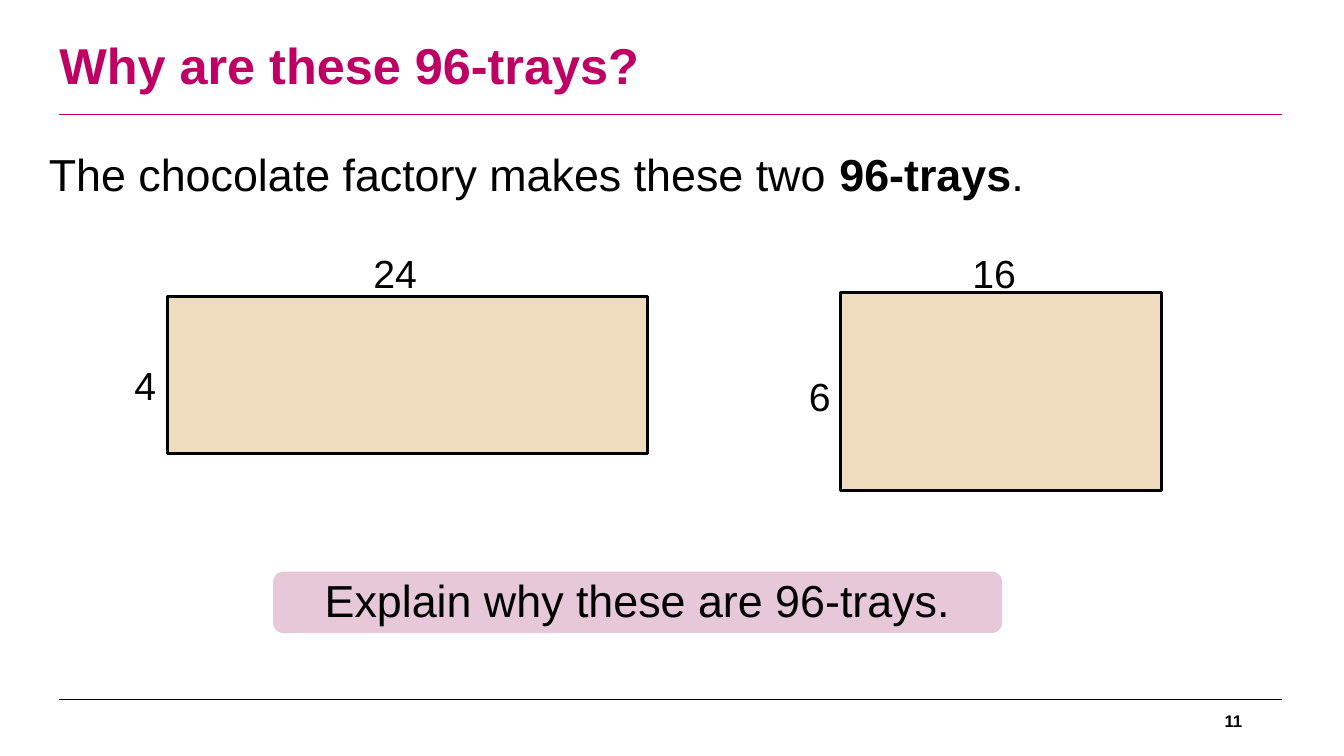
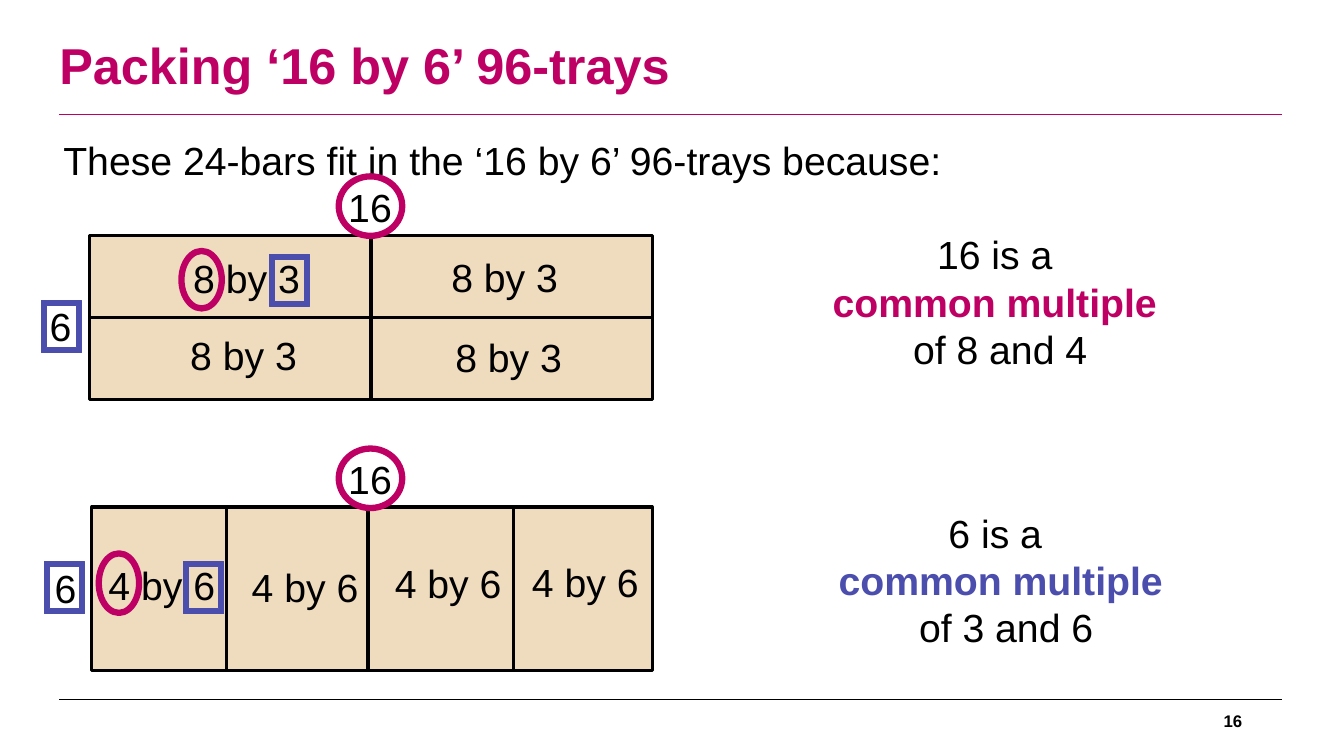
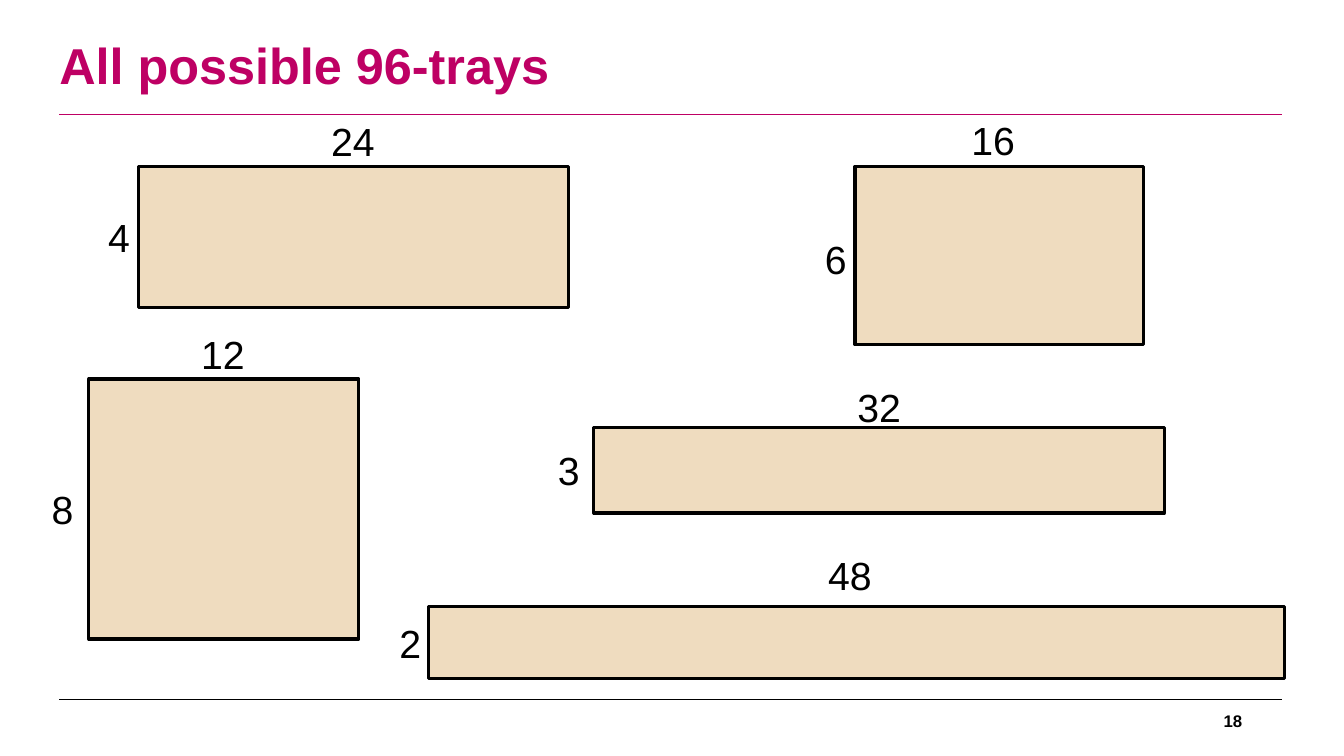
from collections import namedtuple

from lxml.etree import SubElement
from pptx import Presentation
from pptx.dml.color import RGBColor
from pptx.enum.shapes import MSO_CONNECTOR as Connector, MSO_SHAPE as Preset
from pptx.enum.text import MSO_ANCHOR as Anchor, PP_ALIGN as Align
from pptx.oxml.ns import qn
from pptx.util import Pt

PX = 9144
PAGE_WIDTH, PAGE_HEIGHT = 1333, 750
MAGENTA = RGBColor(0xBE, 0x00, 0x64)
INDIGO = RGBColor(0x4C, 0x4E, 0xAE)
BLACK = RGBColor(0x00, 0x00, 0x00)
CHOCOLATE = RGBColor(0xEF, 0xDC, 0xBF)
BLUSH = RGBColor(0xE6, 0xC8, 0xD9)

TITLE_FONT = {"name": "Arial", "size": Pt(36), "bold": True}
LARGE_FONT = {"name": "Arial", "size": Pt(32), "bold": False}
BODY_FONT = {"name": "Arial", "size": Pt(28), "bold": False}
NUMBER_FONT = {"name": "Arial", "size": Pt(12), "bold": True}
LABEL_WIDTHS = {1: 42, 2: 64, 6: 127}
LABEL_HEIGHT = 57
BREAK = "\n"

Box = namedtuple("Box", "left top width height")


def apply_format(target, values):
    """Set every named attribute of the target."""
    for name, value in values.items():
        setattr(target, name, value)


def to_emu(lengths):
    """Turn px lengths into EMU."""
    return [length * PX for length in lengths]


def write(shape, spans, font, side=10, anchor=Anchor.TOP, align=Align.LEFT, spacing=1.0):
    """Fill a shape with one paragraph of (text, colour, bold) spans."""
    frame = shape.text_frame
    apply_format(frame, {
        "word_wrap": True, "vertical_anchor": anchor,
        "margin_left": side * PX, "margin_right": side * PX,
        "margin_top": 5 * PX, "margin_bottom": 5 * PX,
    })
    para = frame.paragraphs[0]
    apply_format(para, {"alignment": align, "line_spacing": spacing})
    for text, colour, bold in spans:
        if text == BREAK:
            para.add_line_break()
            continue
        span = para.add_run()
        span.text = text
        apply_format(span.font, {**font, "bold": bold})
        span.font.color.rgb = colour


def add_text(page, box, text, font, colour=BLACK, **layout):
    """Add a text box holding a single span."""
    shape = page.shapes.add_textbox(*to_emu(box))
    write(shape, [(text, colour, font["bold"])], font, **layout)


def add_preset(page, preset, box, fill=None, line=None, weight=2.25):
    """Add a flat preset shape with optional fill and outline."""
    shape = page.shapes.add_shape(preset, *to_emu(box))
    shape.shadow.inherit = False
    if fill is None:
        shape.fill.background()
    else:
        shape.fill.solid()
        shape.fill.fore_color.rgb = fill
    if line is None:
        shape.line.fill.background()
    else:
        shape.line.color.rgb = line
        shape.line.width = Pt(weight)
    return shape


def add_line(page, start, end, colour=BLACK, weight=2.25):
    """Add a straight line without a shadow."""
    line = page.shapes.add_connector(Connector.STRAIGHT, *to_emu(start + end))
    line.line.color.rgb = colour
    line.line.width = Pt(weight)
    SubElement(line._element.spPr, qn("a:effectLst"))


def add_label(page, origin, offset, text):
    """Add a centred label at an offset from the origin box."""
    box = Box(origin.left + offset[0], origin.top + offset[1],
              LABEL_WIDTHS[len(text)], LABEL_HEIGHT)
    add_text(page, box, text, BODY_FONT, side=0, align=Align.CENTER)


def add_ring(page, origin, offset, width, height):
    """Circle a number at an offset from the origin box."""
    box = Box(origin.left + offset[0], origin.top + offset[1], width, height)
    add_preset(page, Preset.OVAL, box, line=MAGENTA, weight=4.5)


def add_frame(page, origin, offset):
    """Frame a number at an offset from the origin box."""
    box = Box(origin.left + offset[0], origin.top + offset[1], 40, 52)
    add_preset(page, Preset.FRAME, box, INDIGO, INDIGO, 0.75)


def add_tray(page, box, across, across_offset, down, down_offset):
    """Draw a tray with its two side lengths."""
    add_preset(page, Preset.RECTANGLE, box, CHOCOLATE, BLACK)
    add_label(page, box, across_offset, across)
    add_label(page, box, down_offset, down)


def add_packed_tray(page, box, sides, column_cuts, row_cuts, bar, bar_offsets, rings, frames):
    """Draw a tray cut into bars, with its matching numbers marked."""
    add_tray(page, box, *sides)
    for cut in column_cuts:
        x = box.left + cut
        add_line(page, (x, box.top), (x, box.top + box.height))
    for cut in row_cuts:
        y = box.top + cut
        add_line(page, (box.left, y), (box.left + box.width, y))
    for offset in bar_offsets:
        add_label(page, box, offset, bar)
    for offset, width, height in rings:
        add_ring(page, box, offset, width, height)
    for offset in frames:
        add_frame(page, box, offset)


def add_reason(page, box, number, colour, factors, gap_before="", gap_after=""):
    """State which number is a common multiple."""
    shape = page.shapes.add_textbox(*to_emu(box))
    write(shape, [
        (f"{number} is a ", BLACK, False), (BREAK, BLACK, False),
        ("common multiple" + gap_before, colour, True), (BREAK, BLACK, False),
        (gap_after + "of " + factors, BLACK, False),
    ], BODY_FONT, align=Align.CENTER)


def add_page(deck, title, number):
    """Add a blank page with title, rules and page number."""
    page = deck.slides.add_slide(deck.slide_layouts[6])
    for y, colour in ((694, BLACK), (114, MAGENTA)):
        add_line(page, (59, y), (1272, y), colour, 0.75)
    add_text(page, Box(49, 12, 1000, 111), title, TITLE_FONT, MAGENTA,
             anchor=Anchor.MIDDLE, spacing=0.9)
    add_text(page, Box(942, 695, 300, 40), number, NUMBER_FONT,
             anchor=Anchor.MIDDLE, align=Align.RIGHT)
    return page


def build_question(deck):
    """Ask why two trays are both 96-trays."""
    page = add_page(deck, "Why are these 96-trays?", "11")
    intro = page.shapes.add_textbox(*to_emu(Box(15, 137, 1034, 71)))
    write(intro, [
        ("The chocolate factory makes these two ", BLACK, False),
        ("96-trays", BLACK, True), (".", BLACK, False),
    ], LARGE_FONT, anchor=Anchor.MIDDLE, align=Align.CENTER)
    add_tray(page, Box(166, 294, 476, 156), "24", (194, -52), "4", (-43, 60))
    add_tray(page, Box(834, 290, 318, 197), "16", (120, -48), "6", (-42, 74))
    prompt = add_preset(page, Preset.ROUNDED_RECTANGLE, Box(271, 567, 723, 61), BLUSH)
    write(prompt, [("Explain why these are 96-trays.", BLACK, False)], LARGE_FONT,
          anchor=Anchor.MIDDLE, align=Align.CENTER, spacing=0.97)


def build_packing(deck):
    """Show two ways of packing bars into a 16 by 6 tray."""
    page = add_page(deck, "Packing ‘16 by 6’ 96-trays", "16")
    add_text(page, Box(53, 125, 966, 54),
             "These 24-bars fit in the ‘16 by 6’ 96-trays because:", BODY_FONT, spacing=1.11)
    add_packed_tray(
        page, Box(89, 234, 558, 162), ("16", (246, -57), "6", (-50, 61)),
        [279], [81], "8 by 3", [(92, 13), (348, 12), (89, 90), (352, 92)],
        [((247, -59), 63, 59), ((91, 15), 40, 57)], [(-48, 64), (178, 18)])
    add_packed_tray(
        page, Box(91, 503, 556, 162), ("16", (244, -56), "6", (-47, 52)),
        [134, 274, 418], [], "4 by 6", [(6, 49), (148, 51), (290, 47), (426, 46)],
        [((245, -58), 63, 59), ((7, 46), 40, 59)], [(-47, 54), (91, 54)])
    add_reason(page, Box(784, 224, 416, 151), 16, MAGENTA, "8 and 4", gap_before=" ")
    add_reason(page, Box(775, 500, 435, 151), 6, INDIGO, "3 and 6", gap_after=" ")


def build_all_trays(deck):
    """Show every possible 96-tray."""
    page = add_page(deck, "All possible 96-trays", "18")
    for tray in (
        (Box(137, 165, 427, 140), "24", (181, -54), "4", (-40, 42)),
        (Box(848, 165, 286, 177), "16", (105, -55), "6", (-40, 64)),
        (Box(425, 602, 849, 71), "48", (386, -60), "2", (-39, 7)),
        (Box(589, 424, 566, 85), "32", (251, -49), "3", (-46, 14)),
        (Box(88, 376, 268, 258), "12", (101, -53), "8", (-47, 101)),
    ):
        add_tray(page, *tray)


def main():
    """Build and save the deck."""
    deck = Presentation()
    deck.slide_width, deck.slide_height = to_emu((PAGE_WIDTH, PAGE_HEIGHT))
    for build in (build_question, build_packing, build_all_trays):
        build(deck)
    deck.save("out.pptx")


if __name__ == "__main__":
    main()
